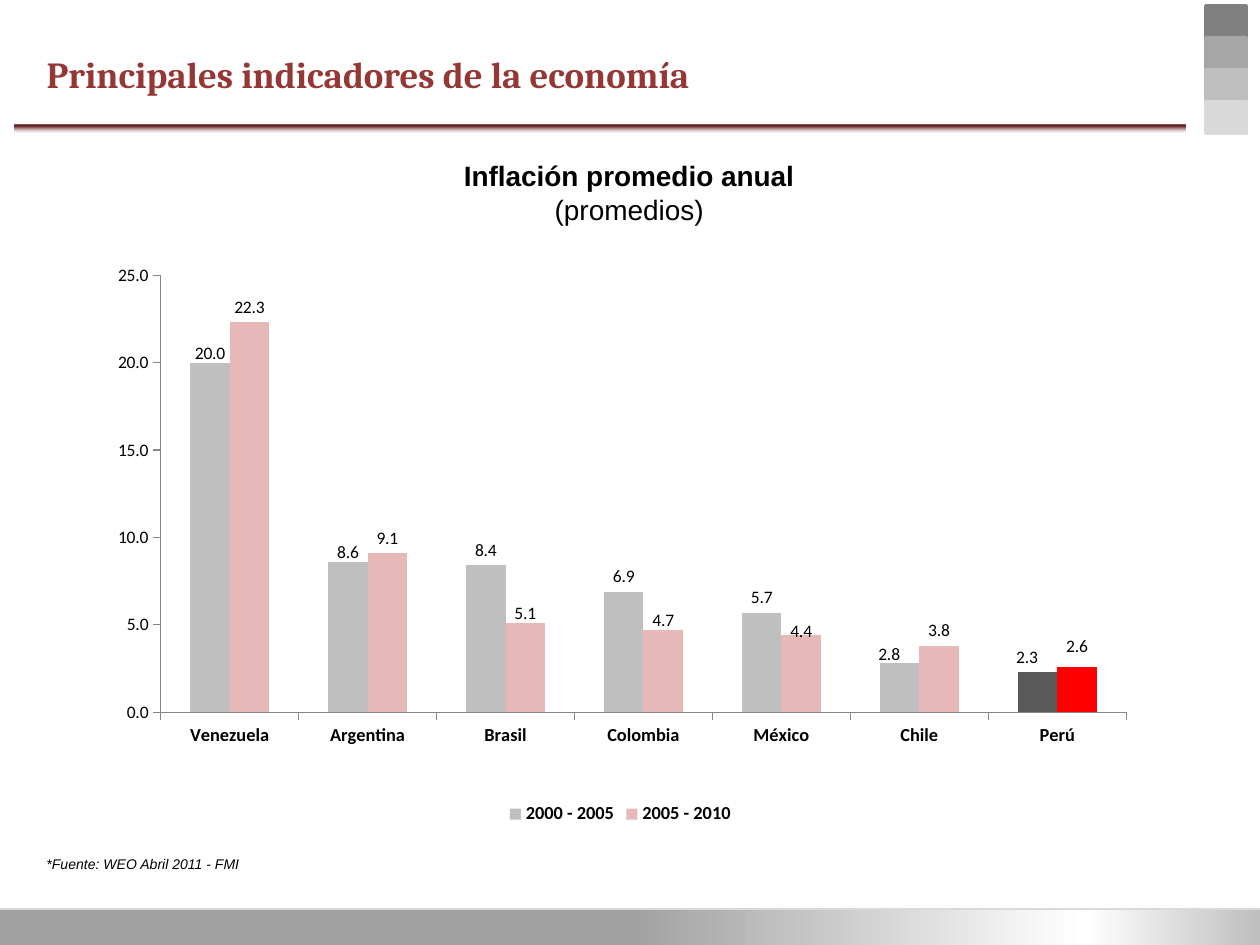
from lxml.etree import SubElement
from pptx import Presentation
from pptx.chart.data import CategoryChartData
from pptx.dml.color import RGBColor
from pptx.enum.chart import XL_CHART_TYPE, XL_LABEL_POSITION, XL_LEGEND_POSITION, XL_TICK_MARK
from pptx.enum.shapes import MSO_CONNECTOR, MSO_SHAPE
from pptx.enum.text import PP_ALIGN
from pptx.oxml import parse_xml
from pptx.oxml.ns import nsdecls, qn
from pptx.util import Pt

BLACK = RGBColor(0x00, 0x00, 0x00)
MAROON = RGBColor(0x95, 0x37, 0x35)
RED = RGBColor(0xFF, 0x00, 0x00)
PINK = RGBColor(0xE6, 0xB9, 0xB8)
CHARCOAL = RGBColor(0x59, 0x59, 0x59)
AXIS_GRAY = RGBColor(0x86, 0x86, 0x86)
SILVER = RGBColor(0xBF, 0xBF, 0xBF)
PALE_GRAY = RGBColor(0xD9, 0xD9, 0xD9)
SQUARE_GRAYS = [RGBColor(0x80, 0x80, 0x80), RGBColor(0xA6, 0xA6, 0xA6), SILVER, PALE_GRAY]
FOOTER_STOPS = [(50, RGBColor(0xA1, 0xA1, 0xA1), 100), (86, RGBColor(0xFF, 0xFF, 0xFF), 100), (100, SILVER, 100)]
RULE_STOPS = [(23, RGBColor(0x63, 0x25, 0x23), 100), (97, RGBColor(0xFF, 0xEB, 0xFA), 43),
              (100, RGBColor(0x85, 0xC2, 0xFF), 43)]

COUNTRIES = ["Venezuela", "Argentina", "Brasil", "Colombia", "México", "Chile", "Perú"]
PERIODS = [
    ("2000 - 2005", [20, 8.6, 8.4, 6.9, 5.7, 2.8, 2.3], SILVER, CHARCOAL,
     {0: (0, 0.01), 1: (0, 0.01), 5: (-0.01, 0.01), 6: (-0.01, 0)}),
    ("2005 - 2010", [22.3, 9.1, 5.1, 4.7, 4.4, 3.8, 2.6], PINK, RED,
     {2: (0, 0.01), 3: (0, 0.01), 4: (0, 0.02), 6: (0, -0.01)}),
]


class IndicatorSlide:
    """Draws the elements of the indicator slide on one page, in points."""

    def __init__(self, deck):
        self.page = deck.slides.add_slide(deck.slide_layouts[6])
        self.number_format = "0.0"

    def rectangle(self, left, top, width, height):
        shape = self.page.shapes.add_shape(
            MSO_SHAPE.RECTANGLE, Pt(left), Pt(top), Pt(width), Pt(height))
        shape.shadow.inherit = False
        return shape

    def square(self, left, top, width, height, color):
        shape = self.rectangle(left, top, width, height)
        shape.fill.solid()
        shape.fill.fore_color.rgb = color
        shape.line.color.rgb = color
        shape.line.width = Pt(2)

    def gradient(self, left, top, width, height, stops, angle):
        shape = self.rectangle(left, top, width, height)
        shape.line.fill.background()
        shape.fill.gradient()
        shape.fill.gradient_angle = angle
        stop_list = next(shape.element.spPr.iter(qn("a:gsLst")))
        stop_list.clear()
        for position, color, opacity in stops:
            stop = SubElement(stop_list, qn("a:gs"), pos=str(position * 1000))
            fill = SubElement(stop, qn("a:srgbClr"), val=str(color))
            if opacity < 100:
                SubElement(fill, qn("a:alpha"), val=str(opacity * 1000))

    def line(self, left, right, y, color):
        connector = self.page.shapes.add_connector(
            MSO_CONNECTOR.STRAIGHT, Pt(left), Pt(y), Pt(right), Pt(y))
        connector.line.color.rgb = color
        connector.line.width = Pt(0.75)
        SubElement(connector.element.spPr, qn("a:effectLst"))

    def text(self, left, top, width, height, text, font, size, color=BLACK,
             bold=False, italic=False, align=PP_ALIGN.LEFT):
        box = self.page.shapes.add_textbox(Pt(left), Pt(top), Pt(width), Pt(height))
        box.text_frame.word_wrap = True
        box.text_frame.text = text
        for para in box.text_frame.paragraphs:
            para.alignment = align
            for span in para.runs:
                span.font.name = font
                span.font.size = Pt(size)
                span.font.color.rgb = color
                span.font.bold = bold
                span.font.italic = italic
        return box

    def layout(self, **values):
        items = "".join(f'<c:{name} val="{value}"/>' for name, value in values.items())
        return parse_xml(f'<c:layout {nsdecls("c")}><c:manualLayout>{items}</c:manualLayout></c:layout>')

    def style_axis(self, axis):
        axis.has_major_gridlines = False
        axis.major_tick_mark = XL_TICK_MARK.OUTSIDE
        axis.format.line.color.rgb = AXIS_GRAY
        axis.format.line.width = Pt(0.75)

    def style_series(self, series, color, highlight, offsets):
        series.format.fill.solid()
        series.format.fill.fore_color.rgb = color
        last_bar = series.points[len(COUNTRIES) - 1].format.fill
        last_bar.solid()
        last_bar.fore_color.rgb = highlight
        labels = series.data_labels
        labels.show_value = True
        labels.position = XL_LABEL_POSITION.OUTSIDE_END
        labels.number_format = self.number_format
        labels.number_format_is_linked = False
        labels.font.size = Pt(10)
        for index, (x, y) in offsets.items():
            label = series.points[index].data_label
            label.position = XL_LABEL_POSITION.OUTSIDE_END
            label.font.size = Pt(10)
            number = parse_xml(f'<c:numFmt {nsdecls("c")} formatCode="{self.number_format}" sourceLinked="0"/>')
            element = next(item for item in series.data_labels._element.findall(qn("c:dLbl"))
                           if item.find(qn("c:idx")).get("val") == str(index))
            element.insert(1, self.layout(x=x, y=y))
            element.insert(2, number)

    def column_chart(self, left, top, width, height):
        data = CategoryChartData(number_format=self.number_format)
        data.categories = COUNTRIES
        for name, values, *_ in PERIODS:
            data.add_series(name, values)
        chart = self.page.shapes.add_chart(
            XL_CHART_TYPE.COLUMN_CLUSTERED, Pt(left), Pt(top), Pt(width), Pt(height), data).chart
        chart.has_title = False
        chart.font.name = "Calibri"
        chart.font.size = Pt(10)
        chart.font.color.rgb = BLACK
        chart.has_legend = True
        chart.legend.position = XL_LEGEND_POSITION.BOTTOM
        chart.legend.include_in_layout = False
        for part in (chart.legend.font, chart.category_axis.tick_labels.font):
            part.size = Pt(10.5)
            part.bold = True
        for axis in (chart.category_axis, chart.value_axis):
            self.style_axis(axis)
        chart.value_axis.minimum_scale = 0
        chart.value_axis.maximum_scale = 25
        chart.value_axis.major_unit = 5
        chart.value_axis.tick_labels.number_format = self.number_format
        chart.value_axis.tick_labels.number_format_is_linked = False
        plot = chart.plots[0]
        plot.gap_width = 150
        plot.overlap = 0
        plot.vary_by_categories = False
        for series, (_, _, color, highlight, offsets) in zip(plot.series, PERIODS):
            self.style_series(series, color, highlight, offsets)
        plot_area = next(chart.element.iter(qn("c:plotArea")))
        for old in plot_area.findall(qn("c:layout")):
            plot_area.remove(old)
        plot_area.insert(0, self.layout(layoutTarget="inner", xMode="edge", yMode="edge",
                                        x=0.063, y=0.036, w=0.918, h=0.759))


def main():
    deck = Presentation()
    deck.slide_width, deck.slide_height = Pt(720), Pt(540)
    slide = IndicatorSlide(deck)
    slide.gradient(0, 519, 720, 21, FOOTER_STOPS, 0)
    slide.line(0, 720, 519.5, PALE_GRAY)
    for row, gray in enumerate(SQUARE_GRAYS):
        slide.square(689, 3.5 + 18.2 * row, 23, 18.2, gray)
    slide.gradient(8.5, 71.5, 669, 4.5, RULE_STOPS, 270)
    slide.text(19.5, 26, 527, 45, "Principales indicadores de la economía", "Cambria", 21, MAROON, bold=True)
    heading = slide.text(209.5, 87, 300, 46, "Inflación promedio anual\n(promedios)", "Arial", 16,
                         bold=True, align=PP_ALIGN.CENTER)
    heading.text_frame.paragraphs[1].runs[0].font.bold = False
    slide.text(19.5, 485.5, 338, 17, "*Fuente: WEO Abril 2011 - FMI", "Arial", 8, italic=True)
    slide.column_chart(54, 145.5, 601, 329)
    deck.save("out.pptx")


if __name__ == "__main__":
    main()
